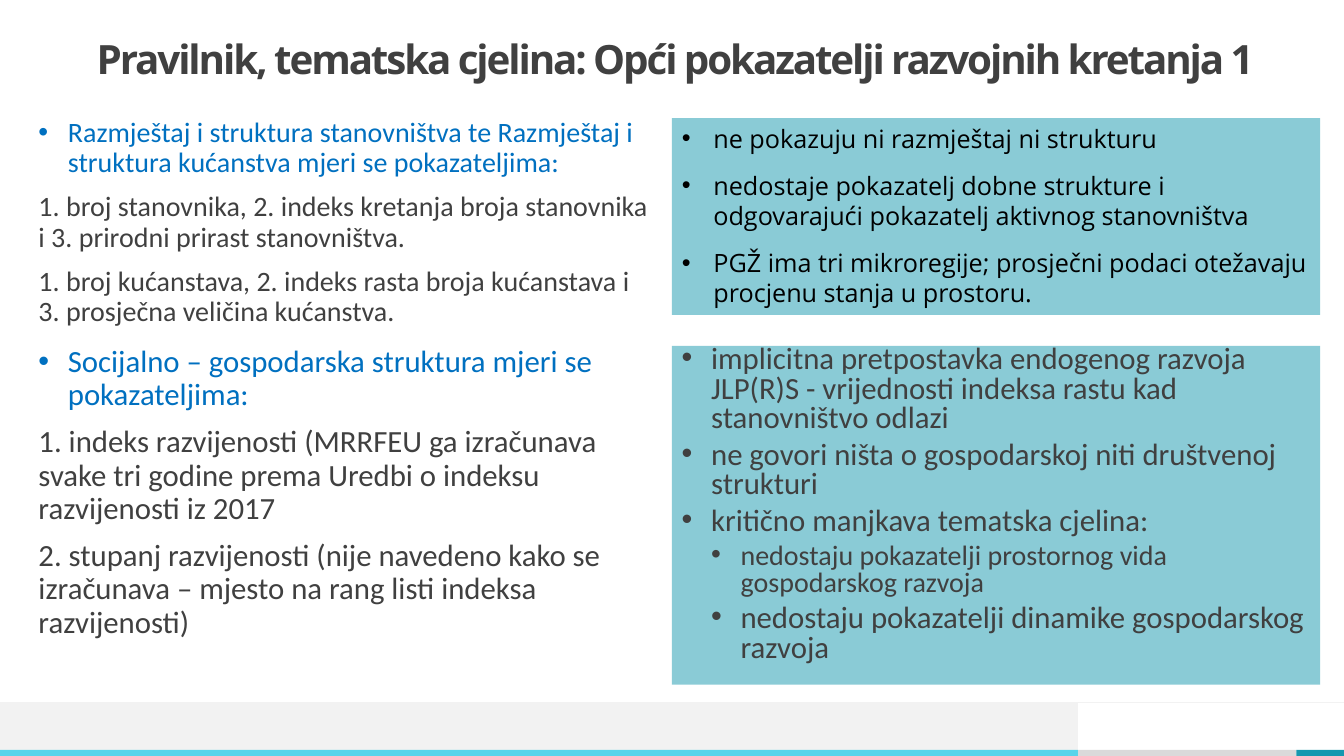
"""Build the slide on general indicators of development trends."""
from lxml import etree
from pptx import Presentation
from pptx.dml.color import RGBColor
from pptx.enum.shapes import MSO_CONNECTOR, MSO_SHAPE
from pptx.enum.text import MSO_ANCHOR, MSO_AUTO_SIZE, PP_ALIGN
from pptx.oxml.ns import qn
from pptx.util import Pt

RECT, LINE = MSO_SHAPE.RECTANGLE, MSO_CONNECTOR.STRAIGHT
TOP, MIDDLE = MSO_ANCHOR.TOP, MSO_ANCHOR.MIDDLE
LEFT, NO_FIT = PP_ALIGN.LEFT, MSO_AUTO_SIZE.NONE
COLORS = {"text": "404040", "blue": "0070C0", "black": "000000", "teal": "1698AF",
          "cyan": "58D4EA", "pale": "F2F2F2", "gray": "DADADA"}


def add_rect(x, y, w, h, color, alpha=None):
    s = slide.shapes.add_shape(RECT, Pt(x), Pt(y), Pt(w), Pt(h))
    s.shadow.inherit = False
    s.fill.solid()
    s.fill.fore_color.rgb = RGBColor.from_string(COLORS[color])
    s.line.fill.background()
    if alpha:
        clr = s._element.spPr.find(qn("a:solidFill"))[0]
        etree.SubElement(clr, qn("a:alpha")).set("val", str(alpha * 1000))
    return s


def add_text(tf, text, size=20, color="text", font="Calibri", bold=False, level=0,
             margin=0, indent=0, spacing=None, before=0, after=0, track=None):
    first = not tf.paragraphs[0].runs
    p = tf.paragraphs[0] if first else tf.add_paragraph()
    p.alignment, p.level = LEFT, level
    p.line_spacing = spacing
    p.space_before, p.space_after = Pt(0 if first else before), Pt(after)
    pPr = p._p.get_or_add_pPr()
    pPr.set("marL", str(Pt(margin)))
    pPr.set("indent", str(Pt(-indent)))
    if indent:
        etree.SubElement(pPr, qn("a:buFont")).set("typeface", "Arial")
        etree.SubElement(pPr, qn("a:buChar")).set("char", "•")
    else:
        etree.SubElement(pPr, qn("a:buNone"))
    r = p.add_run()
    r.text = text
    r.font.name, r.font.size, r.font.bold = font, Pt(size), bold
    r.font.color.rgb = RGBColor.from_string(COLORS[color])
    if track:
        r._r.get_or_add_rPr().set("spc", str(track))


prs = Presentation()
prs.slide_width, prs.slide_height = Pt(960), Pt(540)
slide = prs.slides.add_slide(prs.slide_layouts[1])

for x, y, w, h, color in [(770, 535.7, 156, 4.3, "gray"), (0, 502, 770, 33.7, "pale"),
                          (0, 535.7, 770, 4.3, "cyan"), (926, 535.7, 34, 4.3, "teal")]:
    add_rect(x, y, w, h, color)
rule = slide.shapes.add_connector(LINE, Pt(960), Pt(502), Pt(0), Pt(502))
rule.line.color.rgb = RGBColor.from_string(COLORS["pale"])
rule.line.width = Pt(0.5)
etree.SubElement(rule._element.spPr, qn("a:effectLst"))

title, population = slide.placeholders
economy = slide.shapes.add_textbox(0, 0, 0, 0)
population_note = add_rect(480, 84.4, 463, 140.6, "teal", 50)
economy_note = add_rect(480, 247, 463, 242, "teal", 50)

for sp, x, y, w, h, anchor in [(title, 69, 16.6, 838, 54.7, MIDDLE),
                               (population, 27.5, 84.4, 439, 162.6, TOP),
                               (economy, 27.5, 247, 439, 233, TOP)]:
    sp.left, sp.top, sp.width, sp.height = Pt(x), Pt(y), Pt(w), Pt(h)
    sp.text_frame.vertical_anchor = anchor

for sp in (title, population, economy, population_note, economy_note):
    tf = sp.text_frame
    tf.word_wrap, tf.auto_size = True, NO_FIT
    if sp is not population_note:
        tf.margin_left = tf.margin_right = tf.margin_top = tf.margin_bottom = 0
for sp in (population_note, economy_note):
    sp.text_frame.vertical_anchor = TOP

add_text(title.text_frame,
         "Pravilnik, tematska cjelina: Opći pokazatelji razvojnih kretanja 1",
         size=28.8, font="Open Sans", bold=True, spacing=0.9, track=-150)

left_column = [
    (population, 20,
     "Razmještaj i struktura stanovništva te Razmještaj i struktura kućanstva mjeri se pokazateljima:",
     ["1. broj stanovnika, 2. indeks kretanja broja stanovnika i 3. prirodni prirast stanovništva.",
      "1. broj kućanstava, 2. indeks rasta broja kućanstava i 3. prosječna veličina kućanstva."]),
    (economy, 22,
     "Socijalno – gospodarska struktura mjeri se pokazateljima:",
     ["1. indeks razvijenosti (MRRFEU ga izračunava svake tri godine prema Uredbi o indeksu razvijenosti iz 2017",
      "2. stupanj razvijenosti (nije navedeno kako se izračunava – mjesto na rang listi indeksa razvijenosti)"]),
]
for sp, size, heading, items in left_column:
    add_text(sp.text_frame, heading, size=size, color="blue", margin=21, indent=21, spacing=0.9)
    for item in items:
        add_text(sp.text_frame, item, size=size, spacing=0.9, before=10)

for item in ["ne pokazuju ni razmještaj ni strukturu",
             "nedostaje pokazatelj dobne strukture i odgovarajući pokazatelj aktivnog stanovništva",
             "PGŽ ima tri mikroregije; prosječni podaci otežavaju procjenu stanja u prostoru."]:
    add_text(population_note.text_frame, item, size=18, color="black", font="Open Sans",
             margin=22.5, indent=22.5, before=6, after=6)

for level, size, item in [
    (1, 22, "implicitna pretpostavka endogenog razvoja JLP(R)S - vrijednosti indeksa rastu kad stanovništvo odlazi"),
    (1, 22, "ne govori ništa o gospodarskoj niti društvenoj strukturi"),
    (1, 22, "kritično manjkava tematska cjelina:"),
    (2, 20, "nedostaju pokazatelji prostornog vida gospodarskog razvoja"),
    (2, 22, "nedostaju pokazatelji dinamike gospodarskog razvoja"),
]:
    add_text(economy_note.text_frame, item, size=size, level=level, margin=7 + 21 * level,
             indent=21, spacing=0.8, before=5)

prs.save("out.pptx")
